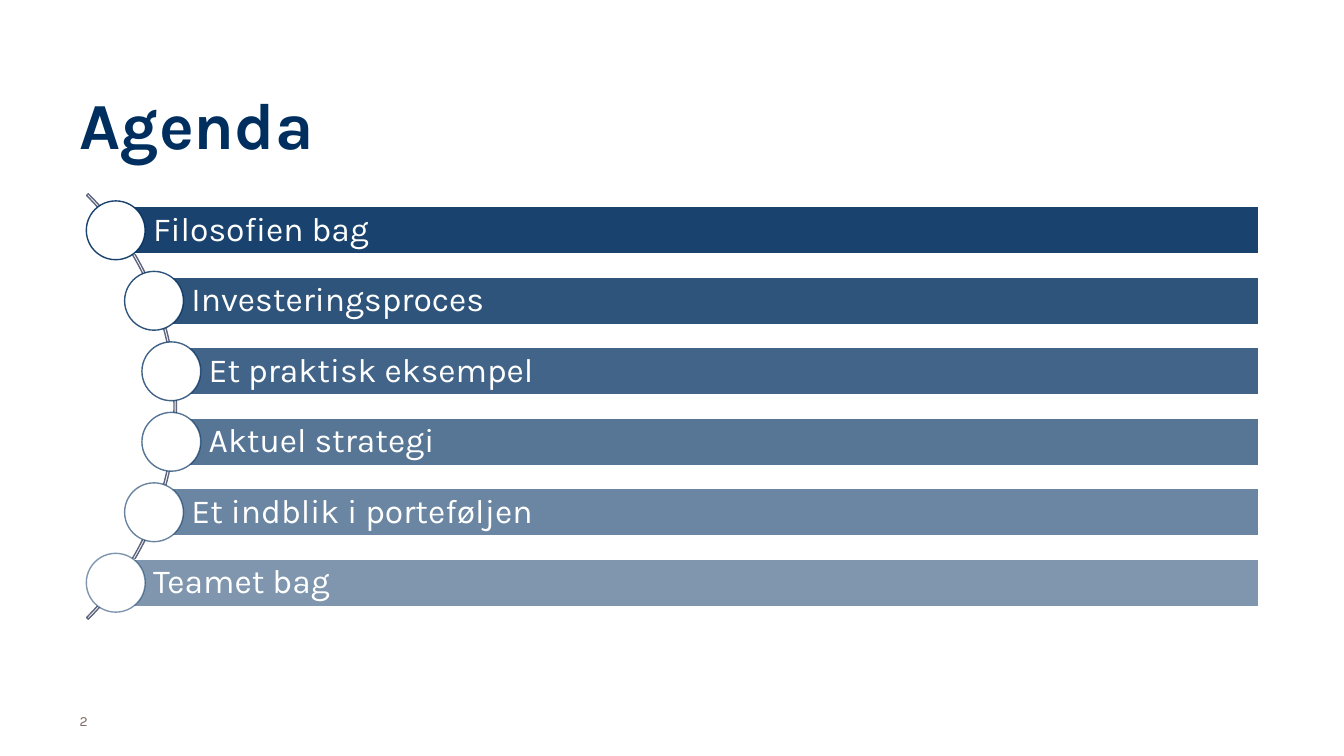
"""Build the agenda slide: six fading bars with circles set along an arc."""
from dataclasses import dataclass
from math import sqrt

from lxml import etree
from pptx import Presentation
from pptx import util as u
from pptx.dml.color import RGBColor
from pptx.enum import shapes, text
from pptx.oxml.ns import qn

TITLE = "Agenda"
PAGE_NUMBER = "2"
TOPICS = [
    "Filosofien bag",
    "Investeringsproces",
    "Et praktisk eksempel",
    "Aktuel strategi",
    "Et indblik i porteføljen",
    "Teamet bag",
]


@dataclass(frozen=True)
class Theme:
    font: str = "Karla"
    navy: str = "002F5F"
    white: str = "FFFFFF"
    arc: str = "5E657D"
    muted: str = "7E6D63"
    title_size: float = 47
    topic_size: float = 24
    number_size: float = 10
    line_width: float = 1


THEME = Theme()
LEFT = 56.9
RIGHT = 898.8
ARC_X, ARC_Y = -88.9, 290.4
ARC_SIZE = 429.8
TRACK_RADIUS = 212.8
PITCH = 50.35
BAR_HEIGHT = 33.6
CIRCLE = 42
FIRST_OPACITY, OPACITY_STEP = 90, 8


def paint(color_format, color, opacity=100):
    color_format.solid()
    color_format.fore_color.rgb = RGBColor.from_string(color)
    if opacity < 100:
        solid = color_format._xPr.find(qn("a:solidFill"))
        etree.SubElement(solid[0], qn("a:alpha")).set("val", str(opacity * 1000))


def add_outlined(slide, kind, box, line, line_opacity=100):
    shape = slide.shapes.add_shape(kind, *map(u.Pt, box))
    shape.shadow.inherit = False
    shape.line.width = u.Pt(THEME.line_width)
    paint(shape.line.fill, line, line_opacity)
    return shape


def write(shape, words, size, color, anchor, insets=(0, 0, 0, 0), spacing=1.0, bold=False):
    frame = shape.text_frame
    frame.word_wrap = True
    frame.vertical_anchor = anchor
    frame.margin_left, frame.margin_top, frame.margin_right, frame.margin_bottom = map(u.Pt, insets)
    frame.text = words
    paragraph = frame.paragraphs[0]
    paragraph.alignment = text.PP_ALIGN.LEFT
    paragraph.line_spacing = spacing
    font = paragraph.runs[0].font
    font.name, font.size, font.bold = THEME.font, u.Pt(size), bold
    font.color.rgb = RGBColor.from_string(color)


def add_topic(slide, index, topic):
    opacity = FIRST_OPACITY - OPACITY_STEP * index
    offset = (index - (len(TOPICS) - 1) / 2) * PITCH
    x = ARC_X + sqrt(TRACK_RADIUS**2 - offset**2)
    y = ARC_Y + offset

    bar = add_outlined(slide, shapes.MSO_SHAPE.RECTANGLE,
                       (x, y - BAR_HEIGHT / 2, RIGHT - x, BAR_HEIGHT), THEME.white)
    paint(bar.fill, THEME.navy, opacity)
    write(bar, topic, THEME.topic_size, THEME.white, text.MSO_ANCHOR.MIDDLE,
          insets=(26.7, 5, 5, 5), spacing=0.9)

    circle = add_outlined(slide, shapes.MSO_SHAPE.OVAL,
                          (x - CIRCLE / 2, y - CIRCLE / 2, CIRCLE, CIRCLE), THEME.navy, opacity)
    paint(circle.fill, THEME.white)


def main():
    deck = Presentation()
    deck.slide_width, deck.slide_height = u.Pt(960), u.Pt(540)
    slide = deck.slides.add_slide(deck.slide_layouts[6])

    title = slide.shapes.add_textbox(*map(u.Pt, (LEFT, 69.1, 497.5, 50.4)))
    write(title, TITLE, THEME.title_size, THEME.navy, text.MSO_ANCHOR.TOP, spacing=0.83, bold=True)
    number = slide.shapes.add_textbox(*map(u.Pt, (LEFT, 506.9, 31, 14.4)))
    write(number, PAGE_NUMBER, THEME.number_size, THEME.muted, text.MSO_ANCHOR.BOTTOM)

    arc = add_outlined(slide, shapes.MSO_SHAPE.BLOCK_ARC,
                       (ARC_X - ARC_SIZE / 2, ARC_Y - ARC_SIZE / 2, ARC_SIZE, ARC_SIZE), THEME.arc)
    arc.fill.background()
    for position, value in enumerate((189, 27, 0.004)):
        arc.adjustments[position] = value

    for index, topic in enumerate(TOPICS):
        add_topic(slide, index, topic)

    deck.save("out.pptx")


if __name__ == "__main__":
    main()
